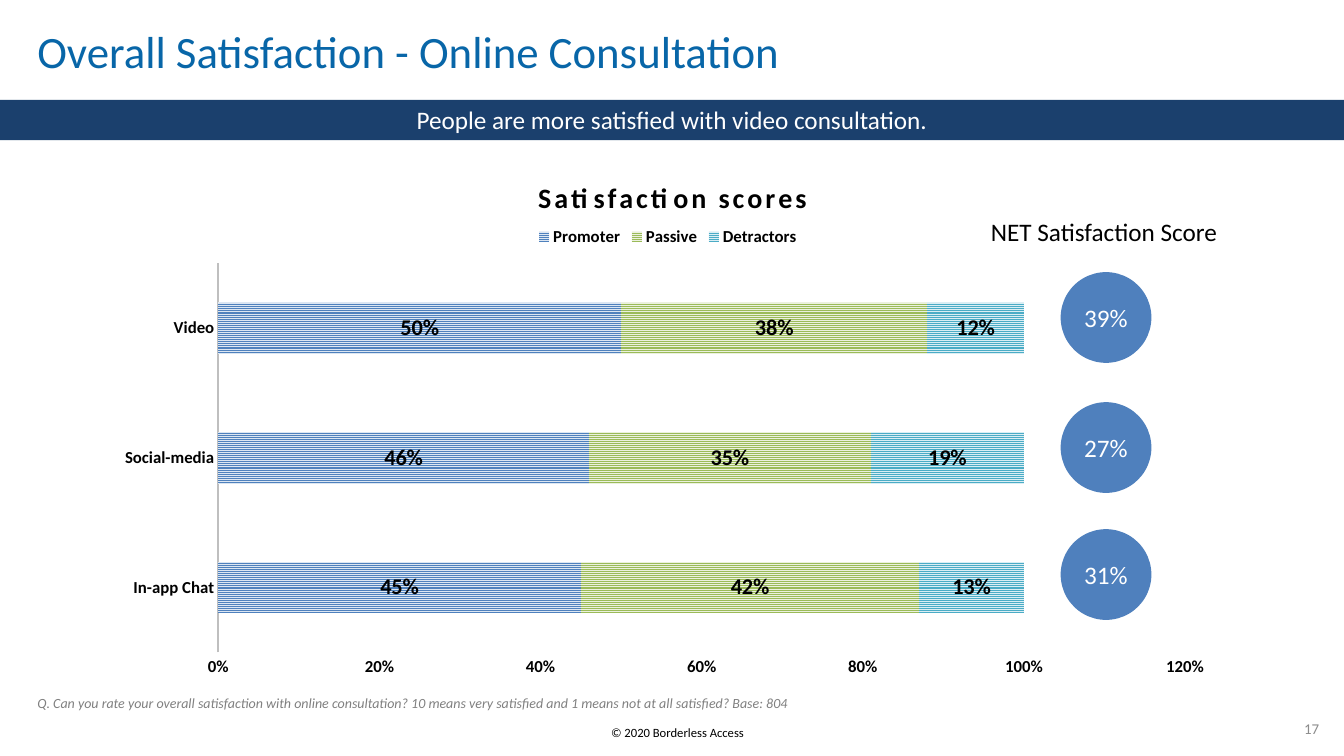
from lxml.etree import SubElement
from pptx import Presentation
from pptx.chart.data import CategoryChartData
from pptx.dml.color import RGBColor
from pptx.enum.chart import (XL_CHART_TYPE, XL_LABEL_POSITION, XL_LEGEND_POSITION,
                             XL_TICK_MARK)
from pptx.enum.dml import MSO_PATTERN
from pptx.enum.shapes import MSO_SHAPE
from pptx.enum.text import MSO_ANCHOR, PP_ALIGN
from pptx.oxml.ns import qn
from pptx.util import Pt

PX = 9144
FONT = "Calibri"
COLORS = {"title": "0866A8", "banner": "1B406D", "circle": "4F80BD", "white": "FFFFFF",
          "black": "000000", "note": "808080", "number": "8C8C8C", "axis": "BFBFBF"}
CATEGORIES = ["In-app Chat", "Social-media", "Video"]
SERIES = [("Promoter", (0.45, 0.46, 0.5), "4F81BD", "DCE6F2"),
          ("Passive", (0.42, 0.35, 0.38), "9BBB59", "EBF1DE"),
          ("Detractors", (0.13, 0.19, 0.12), "4BACC6", "DBEEF4")]
NET_SCORES = [("39%", 270), ("27%", 399), ("31%", 525)]


def px(*lengths):
    """Turn pixel lengths into EMU."""
    return [length * PX for length in lengths]


def rgb(name):
    """Look up a named colour."""
    return RGBColor.from_string(COLORS[name])


def set_font(font, size, color="black", bold=False, italic=False):
    """Apply the slide font with a size, colour and style."""
    font.name, font.size = FONT, Pt(size)
    font.bold, font.italic = bold, italic
    font.color.rgb = rgb(color)


def write(sp, text, size, color="black", align=PP_ALIGN.LEFT, anchor=MSO_ANCHOR.TOP,
          italic=False, inset=True, wrap=True, spacing=None):
    """Put one formatted paragraph into a shape."""
    tf = sp.text_frame
    tf.word_wrap, tf.vertical_anchor = wrap, anchor
    if not inset:
        tf.margin_left = tf.margin_right = tf.margin_top = tf.margin_bottom = 0
    p = tf.paragraphs[0]
    p.alignment, p.line_spacing = align, spacing
    r = p.add_run()
    r.text = text
    set_font(r.font, size, color, italic=italic)


def add_text(s, box, text, size, **fmt):
    """Add a text box."""
    write(s.shapes.add_textbox(*px(*box)), text, size, **fmt)


def add_filled(s, kind, box, fill, text, **fmt):
    """Add a filled shape with a white centred label."""
    sp = s.shapes.add_shape(kind, *px(*box))
    sp.shadow.inherit = False
    sp.fill.solid()
    sp.fill.fore_color.rgb = rgb(fill)
    sp.line.fill.background()
    write(sp, text, 18, color="white", align=PP_ALIGN.CENTER, **fmt)


def place(element, index, **fractions):
    """Give a chart part a manual layout in fractions of the chart."""
    for old in element.findall(qn("c:layout")):
        element.remove(old)
    layout = SubElement(element, qn("c:layout"))
    element.insert(index, layout)
    manual = SubElement(layout, qn("c:manualLayout"))
    if "target" in fractions:
        SubElement(manual, qn("c:layoutTarget")).set("val", fractions.pop("target"))
    for axis in "xy":
        SubElement(manual, qn(f"c:{axis}Mode")).set("val", "edge")
    for key, value in fractions.items():
        SubElement(manual, qn(f"c:{key}")).set("val", str(value))


def style_axis(axis):
    """Set what both axes share."""
    axis.has_major_gridlines = False
    axis.major_tick_mark = axis.minor_tick_mark = XL_TICK_MARK.NONE
    set_font(axis.tick_labels.font, 12, bold=True)


def style_series(series, fore, back):
    """Give a series its striped fill and value labels."""
    fill = series.format.fill
    fill.patterned()
    fill.pattern = MSO_PATTERN.NARROW_HORIZONTAL
    fill.fore_color.rgb = RGBColor.from_string(fore)
    fill.back_color.rgb = RGBColor.from_string(back)
    labels = series.data_labels
    labels.show_value = True
    labels.number_format, labels.number_format_is_linked = "0%", False
    labels.position = XL_LABEL_POSITION.CENTER
    set_font(labels.font, 16, bold=True)


def add_satisfaction_chart(s, box):
    """Add the stacked bars of satisfaction scores."""
    data = CategoryChartData(number_format="0%")
    data.categories = CATEGORIES
    for name, values, *_ in SERIES:
        data.add_series(name, values)
    chart = s.shapes.add_chart(XL_CHART_TYPE.BAR_STACKED, *px(*box), data).chart
    set_font(chart.font, 10)
    plot = chart.plots[0]
    plot.gap_width, plot.overlap, plot.vary_by_categories = 150, 100, False
    for series, (_, _, fore, back) in zip(plot.series, SERIES):
        style_series(series, fore, back)

    style_axis(chart.category_axis)
    line = chart.category_axis.format.line
    line.color.rgb, line.width = rgb("axis"), Pt(1.5)
    axis = chart.value_axis
    style_axis(axis)
    axis.minimum_scale, axis.maximum_scale, axis.major_unit = 0, 1.2, 0.2
    axis.tick_labels.number_format = "0%"
    axis.tick_labels.number_format_is_linked = False
    axis.format.line.fill.background()

    chart.has_title = True
    title = chart.chart_title
    title.include_in_layout = False
    r = title.text_frame.paragraphs[0].add_run()
    r.text = "Satisfaction scores"
    set_font(r.font, 20, bold=True)
    r.font._element.set("spc", "200")
    chart.has_legend = True
    legend = chart.legend
    legend.position, legend.include_in_layout = XL_LEGEND_POSITION.TOP, False
    set_font(legend.font, 12, bold=True)
    place(title._element, 1, x=0.38, y=0.04)
    place(legend._element, 1, x=0.38, y=0.14, w=0.24, h=0.04)
    place(chart._chartSpace.chart.plotArea, 0, target="inner", x=0.1, y=0.21, w=0.86, h=0.73)


def main():
    """Build the slide and save it."""
    prs = Presentation()
    prs.slide_width, prs.slide_height = px(1333, 750)
    s = prs.slides.add_slide(prs.slide_layouts[6])
    middle, center = MSO_ANCHOR.MIDDLE, PP_ALIGN.CENTER
    add_text(s, (485, 714, 374, 25), "© 2020 Borderless Access", 9, align=center)
    add_text(s, (37, 31, 1128, 46), "Overall Satisfaction - Online Consultation", 32,
             color="title", anchor=middle, inset=False, spacing=0.85)
    add_text(s, (1292, 714, 18, 18), "17", 10.7, color="number", align=center,
             anchor=middle, inset=False, wrap=False)
    add_text(s, (37, 689, 1271, 17),
             "Q. Can you rate your overall satisfaction with online consultation? "
             "10 means very satisfied and 1 means not at all satisfied? Base: 804",
             10, color="note", anchor=MSO_ANCHOR.BOTTOM, italic=True, inset=False)
    add_filled(s, MSO_SHAPE.RECTANGLE, (0, 99, 1333, 40), "banner",
               "People are more satisfied with video consultation.")
    add_satisfaction_chart(s, (105, 150, 1115, 529))
    for score, top in NET_SCORES:
        add_filled(s, MSO_SHAPE.OVAL, (1052, top, 90, 90), "circle", score, anchor=middle)
    add_text(s, (973, 210, 247, 40), "NET Satisfaction Score", 18, wrap=False)
    prs.save("out.pptx")


if __name__ == "__main__":
    main()
